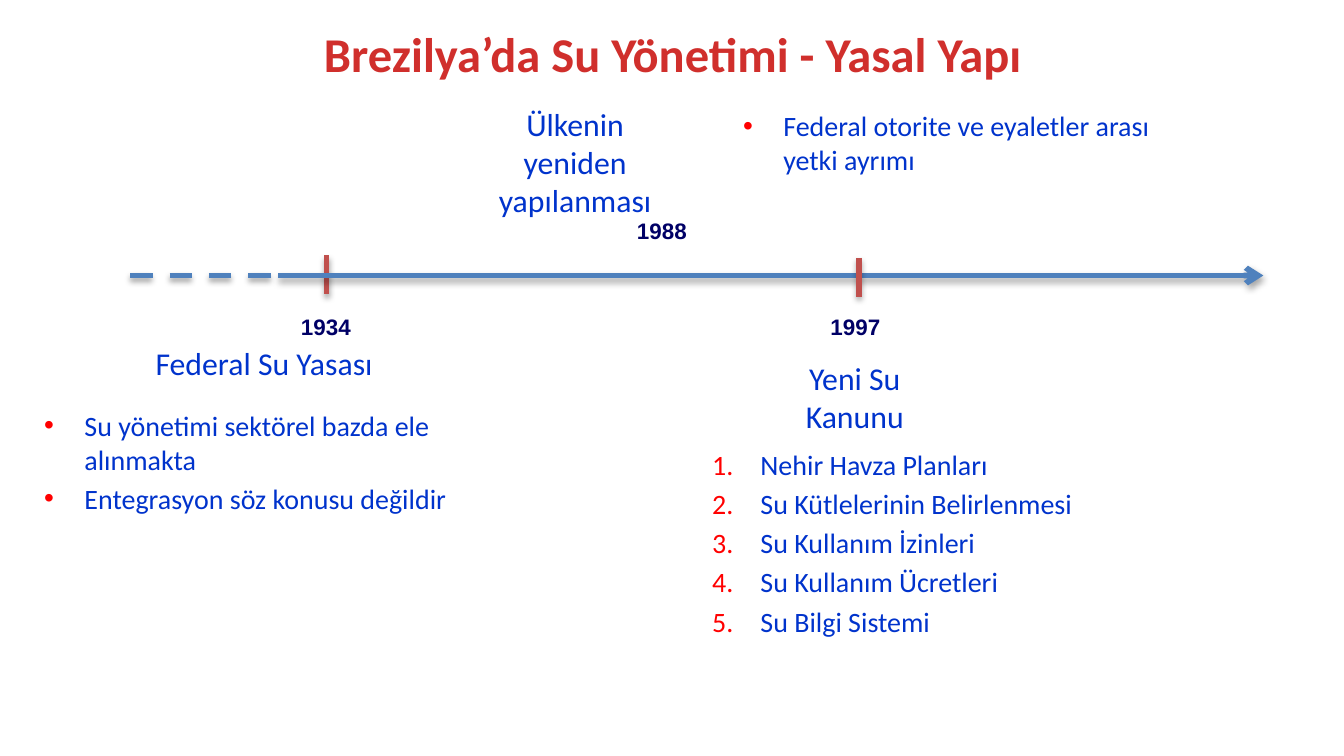
from dataclasses import dataclass

from lxml import etree
from pptx import Presentation
from pptx.dml.color import RGBColor
from pptx.enum.dml import MSO_LINE
from pptx.enum.shapes import MSO_CONNECTOR
from pptx.enum.text import MSO_ANCHOR, PP_ALIGN
from pptx.oxml.ns import qn
from pptx.util import Emu, Pt

PX = 9144  # 100 px to the inch
SLIDE_WIDTH = 1000
RED_TITLE = RGBColor(0xD0, 0x2F, 0x2C)
NAVY = RGBColor(0x00, 0x00, 0x66)
BLUE = RGBColor(0x00, 0x33, 0xCC)
AXIS_BLUE = RGBColor(0x4F, 0x81, 0xBD)
TICK_RED = RGBColor(0xC0, 0x50, 0x4D)
BULLET_RED = RGBColor(0xFF, 0x00, 0x00)
CENTER, LEFT = PP_ALIGN.CENTER, PP_ALIGN.LEFT
TOP, MIDDLE = MSO_ANCHOR.TOP, MSO_ANCHOR.MIDDLE
STRAIGHT = MSO_CONNECTOR.STRAIGHT
DASH = MSO_LINE.DASH
AXIS_Y = 205
TICK_HEIGHT = 29


@dataclass(frozen=True)
class Box:
    left: int
    top: int
    width: int
    height: int


@dataclass(frozen=True)
class Label:
    text: str
    box: Box


@dataclass(frozen=True)
class PointList:
    items: tuple[str, ...]
    box: Box
    indent: int
    numbered: bool = False


YEARS = (
    Label("1934", Box(199, 228, 87, 30)),
    Label("1988", Box(449, 157, 87, 30)),
    Label("1997", Box(593, 228, 87, 30)),
)
EVENTS = (
    Label("Federal Su Yasası", Box(97, 251, 199, 38)),
    Label("Ülkenin yeniden yapılanması", Box(350, 73, 156, 96)),
    Label("Yeni Su Kanunu", Box(557, 262, 158, 67)),
)
POINT_LISTS = (
    PointList(
        (
            "Nehir Havza Planları",
            "Su Kütlelerinin Belirlenmesi",
            "Su Kullanım İzinleri",
            "Su Kullanım Ücretleri",
            "Su Bilgi Sistemi",
        ),
        Box(520, 328, 385, 156), indent=36, numbered=True,
    ),
    PointList(
        ("Federal otorite ve eyaletler arası yetki ayrımı",),
        Box(543, 76, 362, 60), indent=30,
    ),
    PointList(
        ("Su yönetimi sektörel bazda ele alınmakta", "Entegrasyon söz konusu değildir"),
        Box(23, 299, 385, 121), indent=30,
    ),
)


def px(length: int) -> Emu:
    return Emu(length * PX)


def add_bullet(paragraph, indent: int, numbered: bool) -> None:
    properties = paragraph._p.get_or_add_pPr()
    properties.set("marL", str(px(indent)))
    properties.set("indent", str(-px(indent)))
    color = etree.SubElement(properties, qn("a:buClr"))
    etree.SubElement(color, qn("a:srgbClr"), val=str(BULLET_RED))
    etree.SubElement(properties, qn("a:buFont"), typeface="Calibri" if numbered else "Arial")
    if numbered:
        etree.SubElement(properties, qn("a:buAutoNum"), type="arabicPeriod")
    else:
        etree.SubElement(properties, qn("a:buChar"), char="•")


def add_text(slide, box: Box, *lines: str, size: int, color: RGBColor,
             font: str = "Calibri", bold: bool = False, align=CENTER,
             anchor=TOP, indent: int = 0, numbered: bool = False) -> None:
    """Add a text box with one paragraph per line; an indent gives it bullets."""
    frame = slide.shapes.add_textbox(
        px(box.left), px(box.top), px(box.width), px(box.height)
    ).text_frame
    frame.word_wrap = True
    frame.vertical_anchor = anchor
    for index, line in enumerate(lines):
        paragraph = frame.add_paragraph() if index else frame.paragraphs[0]
        if indent:
            add_bullet(paragraph, indent, numbered)
        if index:
            paragraph.space_before = Pt(3)
        paragraph.alignment = align
        run = paragraph.add_run()
        run.text = line
        run.font.name = font
        run.font.size = Pt(size)
        run.font.bold = bold
        run.font.color.rgb = color


def add_line(slide, start: tuple[int, int], end: tuple[int, int], color: RGBColor,
             dash=None, arrow: bool = False) -> None:
    """Add a straight line with a soft shadow below it."""
    connector = slide.shapes.add_connector(STRAIGHT, *map(px, start + end))
    connector.line.color.rgb = color
    connector.line.width = Pt(3)
    if dash is not None:
        connector.line.dash_style = dash
    properties = connector._element.spPr
    if arrow:
        etree.SubElement(properties.find(qn("a:ln")), qn("a:tailEnd"), type="arrow")
    effects = etree.SubElement(properties, qn("a:effectLst"))
    shadow = etree.SubElement(
        effects, qn("a:outerShdw"), blurRad=str(Pt(3.1)), dist=str(Pt(1.8)),
        dir="5400000", rotWithShape="0",
    )
    shade = etree.SubElement(shadow, qn("a:srgbClr"), val="000000")
    etree.SubElement(shade, qn("a:alpha"), val="35000")


def add_tick(slide, x: int, top: int) -> None:
    add_line(slide, (x, top), (x, top + TICK_HEIGHT), TICK_RED)


def main() -> None:
    presentation = Presentation()
    presentation.slide_width = px(SLIDE_WIDTH)
    presentation.slide_height = Emu(px(SLIDE_WIDTH) * 9 // 16)
    slide = presentation.slides.add_slide(presentation.slide_layouts[6])

    add_text(slide, Box(51, 0, 900, 79), "Brezilya’da Su Yönetimi - Yasal Yapı",
             size=26, color=RED_TITLE, bold=True, anchor=MIDDLE)

    add_tick(slide, 243, 190)
    for year in YEARS:
        add_text(slide, year.box, year.text, size=12, color=NAVY, font="Arial", bold=True)
    for event in EVENTS:
        add_text(slide, event.box, event.text, size=17, color=BLUE)
    for points in POINT_LISTS:
        add_text(slide, points.box, *points.items, size=15, color=BLUE, align=LEFT,
                 indent=points.indent, numbered=points.numbered)

    add_line(slide, (207, AXIS_Y), (940, AXIS_Y), AXIS_BLUE, arrow=True)
    add_line(slide, (97, AXIS_Y), (207, AXIS_Y), AXIS_BLUE, dash=DASH)
    add_tick(slide, 639, 192)

    presentation.save("out.pptx")


if __name__ == "__main__":
    main()
